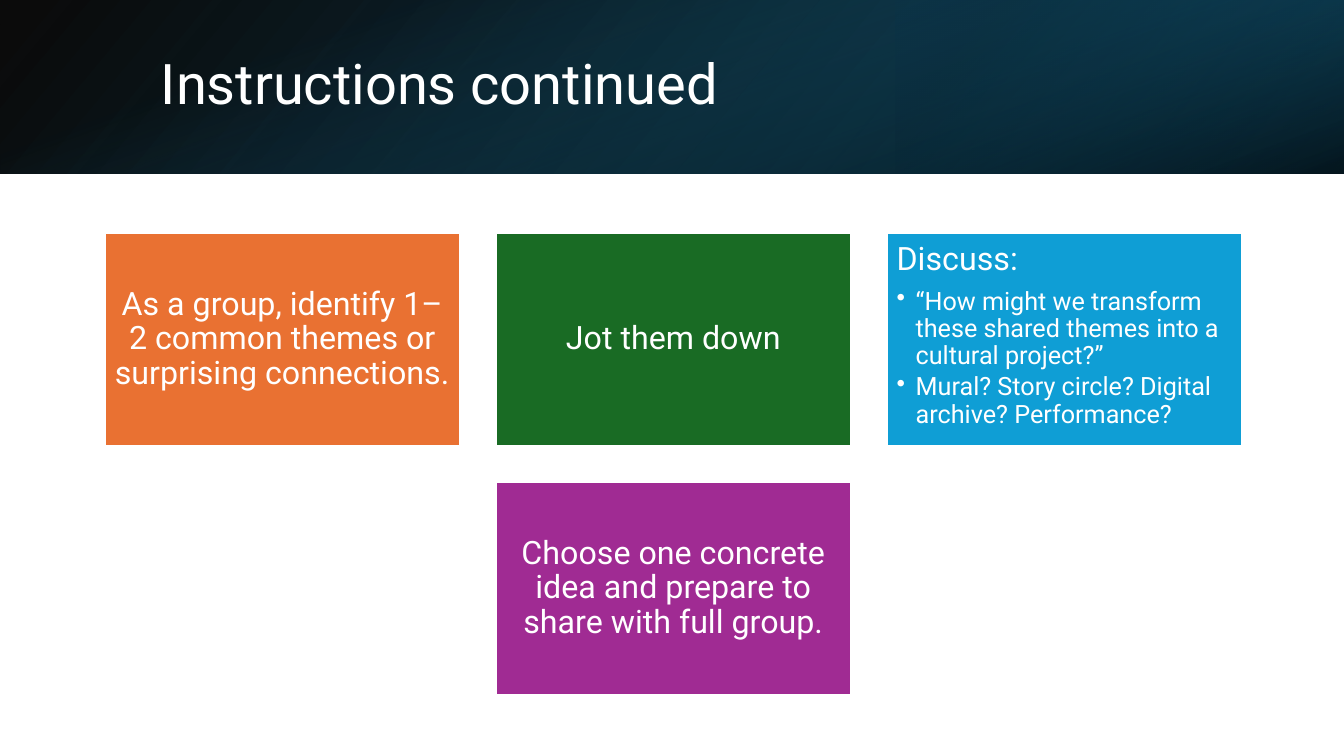
from lxml import etree
from pptx import Presentation
from pptx import util as u
from pptx.dml.color import RGBColor
from pptx.enum import shapes, text
from pptx.oxml.ns import qn

PX = u.Inches(1) / 100.8
SLIDE_W, SLIDE_H, BAND_H = 1344, 756, 174

WHITE = RGBColor(0xFF, 0xFF, 0xFF)
BLACK = RGBColor(0x00, 0x00, 0x00)
NAVY = RGBColor(0x10, 0x48, 0x62)
DEEP_TEAL = RGBColor(0x0B, 0x30, 0x41)
TEAL = RGBColor(0x15, 0x60, 0x82)
ORANGE = RGBColor(0xE9, 0x71, 0x32)
GREEN = RGBColor(0x19, 0x6B, 0x24)
BLUE = RGBColor(0x0F, 0x9E, 0xD5)
PURPLE = RGBColor(0xA0, 0x2B, 0x93)


def px(length):
    return u.Emu(round(length * PX))


class SlideBuilder:
    font = "Roboto"
    inset = u.Pt(6.9)

    def __init__(self, slide):
        self.slide = slide

    def rectangle(self, *box):
        rect = self.slide.shapes.add_shape(
            shapes.MSO_SHAPE.RECTANGLE, *map(px, box))
        rect.shadow.inherit = False
        return rect

    def gradient(self, box, stops, angle, rotation=0, flip=False):
        """Stops are (position %, colour, opacity %); angle runs clockwise."""
        rect = self.rectangle(*box)
        rect.rotation = rotation
        rect.line.fill.background()
        rect.fill.gradient()
        rect.fill.gradient_angle = 360 - angle
        for stop, (position, colour, _) in zip(rect.fill.gradient_stops, stops):
            stop.position = position / 100
            stop.color.rgb = colour
        properties = rect._element.spPr
        for node, (_, _, opacity) in zip(properties.iter(qn("a:srgbClr")), stops):
            etree.SubElement(node, qn("a:alpha"), val=str(opacity * 1000))
        if flip:
            properties.find(qn("a:xfrm")).set("flipH", "1")

    def paragraph(self, paragraph, words, size, align, after=0):
        paragraph.alignment = align
        paragraph.line_spacing = 0.9
        paragraph.space_after = u.Pt(after)
        run = paragraph.add_run()
        run.text = words
        run.font.name = self.font
        run.font.size = u.Pt(size)
        run.font.color.rgb = WHITE

    def title(self, words, *box):
        frame = self.slide.shapes.add_textbox(*map(px, box)).text_frame
        frame.word_wrap = True
        frame.vertical_anchor = text.MSO_ANCHOR.MIDDLE
        self.paragraph(frame.paragraphs[0], words, 40, text.PP_ALIGN.LEFT)

    def card(self, box, colour, heading, bullets=()):
        """Centre a lone heading; set a heading with bullets from the top left."""
        rect = self.rectangle(*box)
        rect.fill.solid()
        rect.fill.fore_color.rgb = colour
        rect.line.color.rgb = WHITE
        rect.line.width = u.Pt(1.5)
        frame = rect.text_frame
        frame.word_wrap = True
        frame.margin_left = frame.margin_right = self.inset
        frame.margin_top = frame.margin_bottom = self.inset
        frame.vertical_anchor = (
            text.MSO_ANCHOR.TOP if bullets else text.MSO_ANCHOR.MIDDLE)
        align = text.PP_ALIGN.LEFT if bullets else text.PP_ALIGN.CENTER
        self.paragraph(frame.paragraphs[0], heading, 23, align, after=8)
        for words in bullets:
            item = frame.add_paragraph()
            item.level = 1
            self.paragraph(item, words, 18, align, after=2.7)
            properties = item._p.get_or_add_pPr()
            properties.set("marL", str(px(19)))
            properties.set("indent", str(-px(19)))
            etree.SubElement(properties, qn("a:buChar"), char="•")


def main():
    prs = Presentation()
    prs.slide_width, prs.slide_height = px(SLIDE_W), px(SLIDE_H)
    builder = SlideBuilder(prs.slides.add_slide(prs.slide_layouts[6]))

    builder.gradient((0, 0, SLIDE_W, BAND_H),
                     [(0, BLACK, 96), (100, NAVY, 100)], 140, flip=True)
    builder.gradient((SLIDE_W * 2 // 3, 0, SLIDE_W // 3, BAND_H),
                     [(19, DEEP_TEAL, 68), (100, TEAL, 79)], 320,
                     rotation=180, flip=True)
    offset = (SLIDE_W - BAND_H) // 2
    builder.gradient((offset, -offset, BAND_H, SLIDE_W),
                     [(23, TEAL, 0), (99, BLACK, 74)], 340, rotation=90)
    builder.title("Instructions continued", 151, 38, 1107, 97)

    left, top, width, height, gap = 105, 233, 355, 213, 36
    steps = [
        (0, 0, ORANGE,
         "As a group, identify 1–2 common themes or surprising connections."),
        (1, 0, GREEN, "Jot them down"),
        (2, 0, BLUE, "Discuss:", [
            "“How might we transform these shared themes into a cultural project?”",
            "Mural? Story circle? Digital archive? Performance?"]),
        (1, 1, PURPLE,
         "Choose one concrete idea and prepare to share with full group."),
    ]
    for column, row, *content in steps:
        box = (left + column * (width + gap), top + row * (height + gap),
               width, height)
        builder.card(box, *content)

    prs.save("out.pptx")


if __name__ == "__main__":
    main()
